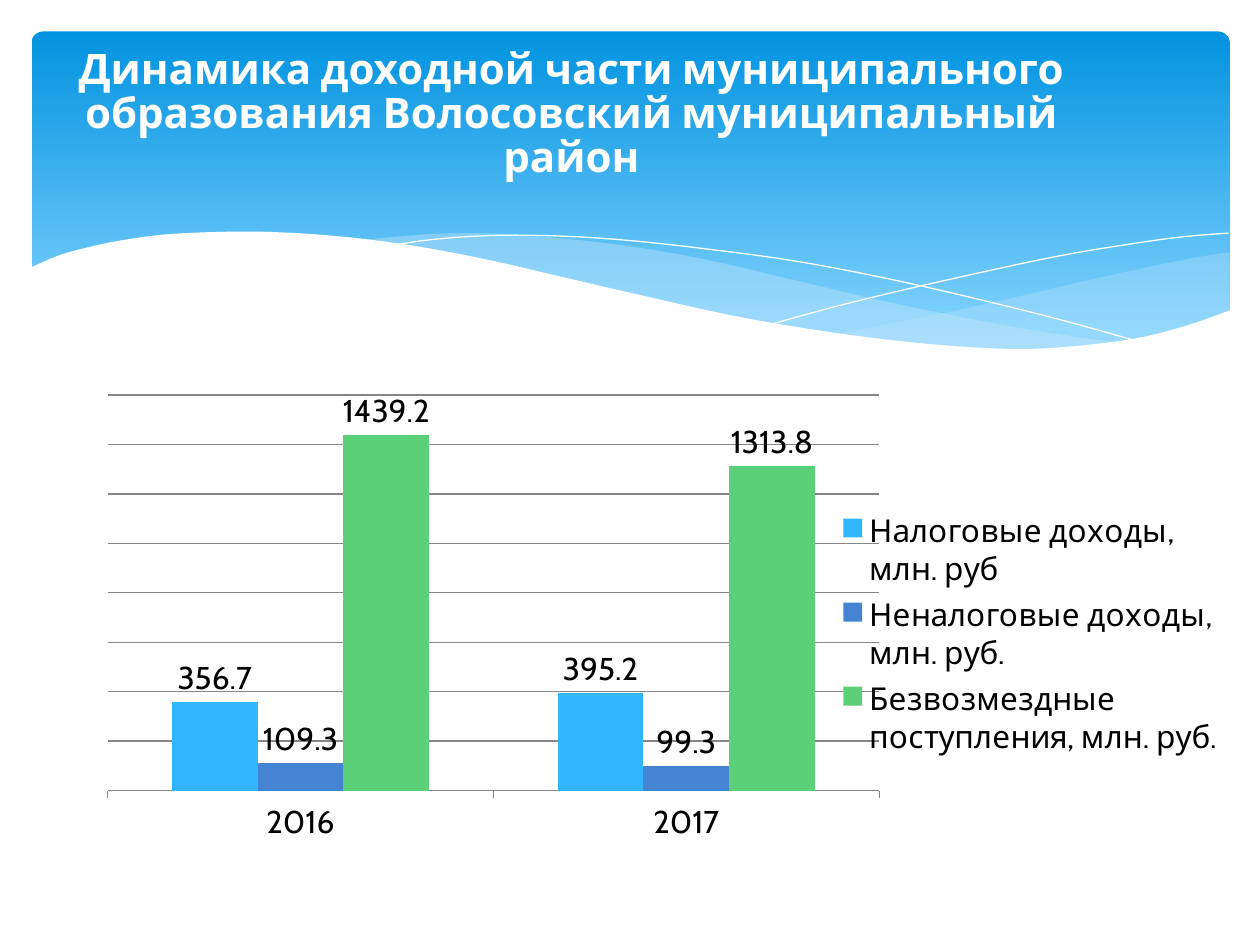
from dataclasses import dataclass

from lxml import etree
from pptx import Presentation
from pptx import util as u
from pptx.chart.data import CategoryChartData
from pptx.dml.color import RGBColor
from pptx.enum import chart as ch
from pptx.enum import shapes, text
from pptx.oxml import parse_xml
from pptx.oxml.ns import nsdecls, qn

FONT = "Cabin"
COLORS = {
    "banner_top": "0293E0", "banner_bottom": "83D3FE", "wave": "C6E7FC",
    "white": "FFFFFF", "black": "000000", "grid": "868686",
    "tax": "31B6FD", "non_tax": "4584D3", "grants": "5BD078",
}
Points = list[tuple[float, float]]


@dataclass
class Wave:
    """A smooth curve; corners close it into an area, otherwise it is a line."""
    curves: list[Points]
    color: str = "white"
    opacity: int = 100
    filled: bool = True


@dataclass
class Income:
    name: str
    values: tuple[float, float]
    color: str


WAVES = [
    Wave([[(9.76, 2), (9.35, 2.07), (8.61, 2.23), (7.79, 2.42), (7.06, 2.57), (6.61, 2.65)],
          [(6.61, 2.65), (7.05, 2.71), (7.57, 2.76), (8.03, 2.78), (8.54, 2.76),
           (9.05, 2.69), (9.42, 2.59), (9.76, 2.47)]], "wave", 29),
    Wave([[(8.93, 2.73), (8.07, 2.6), (7.06, 2.4), (6.29, 2.22), (5.55, 2.05), (4.89, 1.94),
           (4.2, 1.87), (3.61, 1.85), (3.13, 1.88), (2.86, 1.91)],
          [(2.86, 1.91), (3.42, 1.99), (4.04, 2.11), (4.49, 2.22), (5.3, 2.4), (6.01, 2.55),
           (6.65, 2.66), (7.22, 2.74), (7.73, 2.77), (8.18, 2.78), (8.57, 2.77),
           (8.93, 2.73)]], "wave", 40),
    Wave([[(3.09, 1.95), (3.44, 1.9), (3.87, 1.87), (4.33, 1.87), (4.89, 1.9), (5.56, 1.97),
           (6.36, 2.08), (7.27, 2.26), (8.31, 2.51), (9.07, 2.72)]], filled=False),
    Wave([[(6.13, 2.57), (6.72, 2.41), (7.48, 2.23), (8.36, 2.04), (8.95, 1.94),
           (9.38, 1.88), (9.75, 1.85)]], filled=False),
    Wave([[(9.77, 2.46), (9.4, 2.59), (8.99, 2.69), (8.5, 2.75), (8.09, 2.77), (7.61, 2.75),
           (7.08, 2.7), (6.48, 2.62), (5.79, 2.5), (5.03, 2.33), (4.47, 2.2), (3.91, 2.07),
           (3.4, 1.97), (2.92, 1.9), (2.5, 1.86), (2.11, 1.84), (1.77, 1.84), (1.32, 1.86),
           (0.95, 1.91), (0.67, 1.97), (0.46, 2.03), (0.23, 2.13)],
          [(0.23, 3.29), (9.77, 3.29)]]),
]
YEARS = ("2016", "2017")
INCOMES = [
    Income("Налоговые доходы, млн. руб", (356.7, 395.2), "tax"),
    Income("Неналоговые доходы, млн. руб.", (109.3, 99.3), "non_tax"),
    Income("Безвозмездные поступления, млн. руб.", (1439.2, 1313.8), "grants"),
]


def rgb(name: str) -> RGBColor:
    return RGBColor.from_string(COLORS[name])


def format_font(font, size: float, color: str, bold: bool = False) -> None:
    font.name, font.size, font.bold = FONT, u.Pt(size), bold
    font.color.rgb = rgb(color)


def smooth(knots: Points, steps: int = 4) -> Points:
    """Interpolate a Catmull-Rom spline through the knots."""
    padded = [knots[0], *knots, knots[-1]]
    result = [knots[0]]
    for a, b, c, d in zip(padded, padded[1:], padded[2:], padded[3:]):
        for step in range(1, steps + 1):
            t = step / steps
            result.append(tuple(
                0.5 * (2 * q + (r - p) * t + (2 * p - 5 * q + 4 * r - s) * t**2
                       + (3 * q - p - 3 * r + s) * t**3)
                for p, q, r, s in zip(a, b, c, d)))
    return result


def draw_banner(slide) -> None:
    banner = slide.shapes.add_shape(
        shapes.MSO_SHAPE.ROUNDED_RECTANGLE,
        u.Inches(0.25), u.Inches(0.25), u.Inches(9.51), u.Inches(2.7))
    banner.adjustments[0] = 0.034
    banner.shadow.inherit = False
    banner.line.fill.background()
    banner.fill.gradient()
    banner.fill.gradient_angle = 270
    stops = (("banner_top", 0), ("banner_bottom", 0.9))
    for stop, (color, position) in zip(banner.fill.gradient_stops, stops):
        stop.color.rgb, stop.position = rgb(color), position


def draw_wave(slide, wave: Wave) -> None:
    points = [(u.Inches(x), u.Inches(y)) for curve in wave.curves for x, y in smooth(curve)]
    builder = slide.shapes.build_freeform(*points[0])
    builder.add_line_segments(points[1:], close=wave.filled)
    shape = builder.convert_to_shape()
    shape.shadow.inherit = False
    if not wave.filled:
        shape.fill.background()
        shape.line.color.rgb = rgb(wave.color)
        shape.line.width = u.Pt(0)
        return
    shape.line.fill.background()
    shape.fill.solid()
    shape.fill.fore_color.rgb = rgb(wave.color)
    if wave.opacity < 100:
        color = shape.fill._xPr.find(".//" + qn("a:srgbClr"))
        etree.SubElement(color, qn("a:alpha"), val=str(wave.opacity * 1000))


def add_text(slide, content: str, *, left: float, top: float, width: float, height: float,
             size: float, color: str, bold: bool = False, spacing: float = 1.0) -> None:
    box = slide.shapes.add_textbox(*map(u.Inches, (left, top, width, height)))
    frame = box.text_frame
    frame.word_wrap = True
    frame.vertical_anchor = text.MSO_ANCHOR.MIDDLE
    paragraph = frame.paragraphs[0]
    paragraph.alignment = text.PP_ALIGN.CENTER
    paragraph.line_spacing = spacing
    run = paragraph.add_run()
    run.text = content
    format_font(run.font, size, color, bold)


def manual_layout(x: float, y: float, w: float, h: float, inner: bool = False):
    """Layout element with fractions of the chart area."""
    target = '<c:layoutTarget val="inner"/>' if inner else ""
    return parse_xml(
        f'<c:layout {nsdecls("c")}><c:manualLayout>{target}'
        '<c:xMode val="edge"/><c:yMode val="edge"/>'
        f'<c:x val="{x}"/><c:y val="{y}"/><c:w val="{w}"/><c:h val="{h}"/>'
        '</c:manualLayout></c:layout>')


def add_income_chart(slide) -> None:
    data = CategoryChartData(number_format="0.0")
    data.categories = YEARS
    for income in INCOMES:
        data.add_series(income.name, income.values)
    chart = slide.shapes.add_chart(
        ch.XL_CHART_TYPE.COLUMN_CLUSTERED, u.Inches(0.28), u.Inches(2.93),
        u.Inches(9.57), u.Inches(4.13), data).chart
    format_font(chart.font, 18, "black")
    chart.has_title = False

    plot = chart.plots[0]
    plot.gap_width, plot.overlap, plot.vary_by_categories = 150, 0, False
    for series, income in zip(plot.series, INCOMES):
        series.format.fill.solid()
        series.format.fill.fore_color.rgb = rgb(income.color)
        labels = series.data_labels
        labels.show_value = True
        labels.position = ch.XL_LABEL_POSITION.OUTSIDE_END
        labels.number_format, labels.number_format_is_linked = "0.0", False

    values = chart.value_axis
    values.visible = False
    values.minimum_scale, values.maximum_scale, values.major_unit = 0, 1600, 200
    values.has_major_gridlines = True
    chart.category_axis.major_tick_mark = ch.XL_TICK_MARK.OUTSIDE
    for line in (values.major_gridlines.format.line, chart.category_axis.format.line):
        line.color.rgb, line.width = rgb("grid"), u.Pt(0.75)

    chart.has_legend = True
    legend = chart.legend
    legend.position = ch.XL_LEGEND_POSITION.RIGHT
    legend.include_in_layout = False
    legend._element.find(qn("c:legendPos")).addnext(manual_layout(0.66, 0.26, 0.33, 0.5))
    plot_area = chart._chartSpace.chart.plotArea
    for layout in plot_area.findall(qn("c:layout")):
        plot_area.remove(layout)
    plot_area.insert(0, manual_layout(0.06, 0.05, 0.64, 0.76, inner=True))


def main() -> None:
    presentation = Presentation()
    presentation.slide_width, presentation.slide_height = u.Inches(10), u.Inches(7.5)
    slide = presentation.slides.add_slide(presentation.slide_layouts[6])
    draw_banner(slide)
    for wave in WAVES:
        draw_wave(slide, wave)
    add_income_chart(slide)
    add_text(slide, "Динамика доходной части муниципального образования "
             "Волосовский муниципальный район", left=0.2, top=0.29, width=8.67, height=1.25,
             size=24, color="white", bold=True, spacing=0.88)
    presentation.save("out.pptx")


if __name__ == "__main__":
    main()
